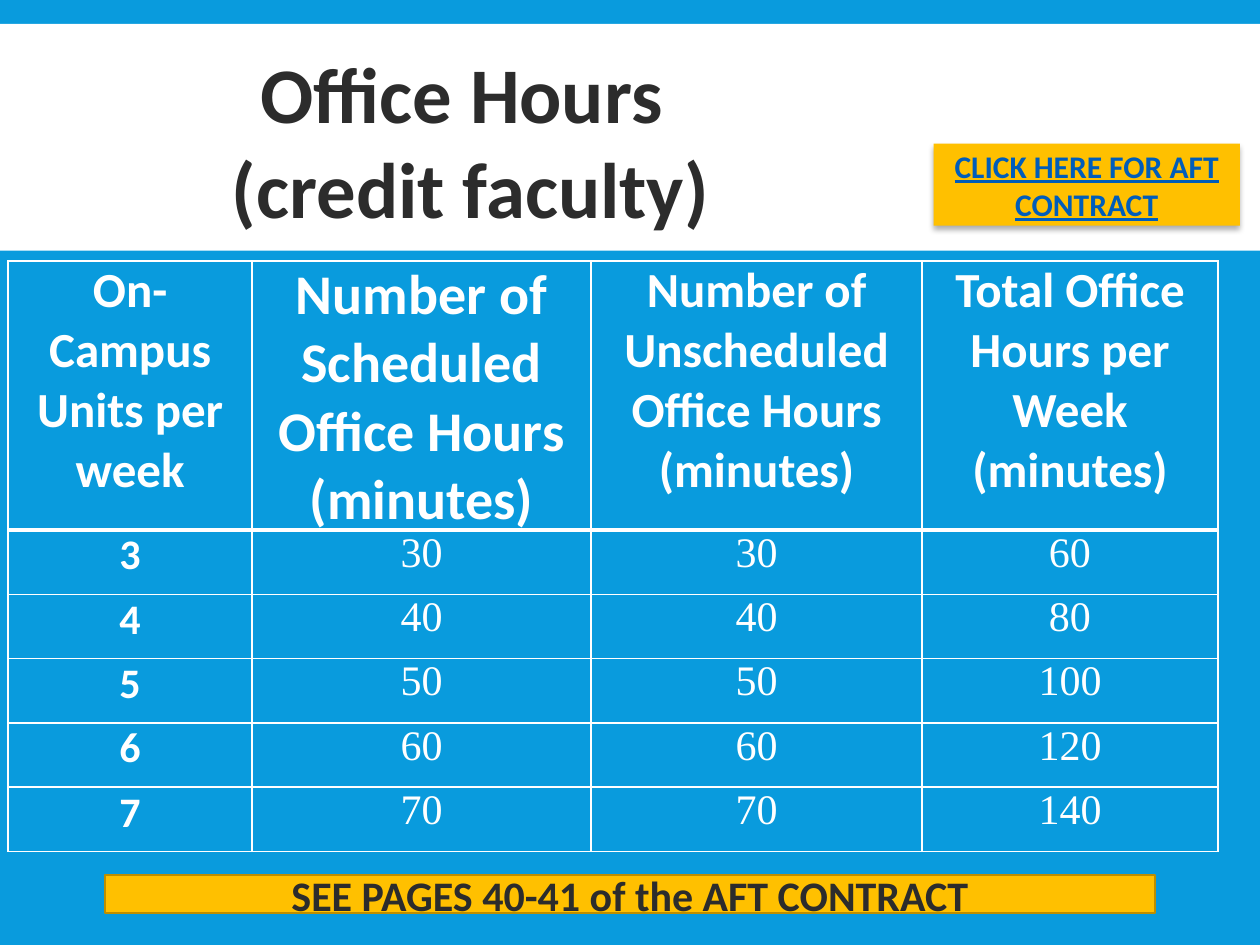
"""Build the office hours slide for credit faculty."""
import lxml.etree
import pptx
import pptx.dml.color
import pptx.enum.shapes
import pptx.enum.text
import pptx.oxml
import pptx.oxml.ns
import pptx.util

Pt = pptx.util.Pt
RGBColor = pptx.dml.color.RGBColor
BLUE = RGBColor(0x09, 0x9B, 0xDD)
WHITE = RGBColor(0xFF, 0xFF, 0xFF)
GOLD = RGBColor(0xFF, 0xC0, 0x00)
DARK_GOLD = RGBColor(0xBD, 0x8E, 0x00)
CHARCOAL = RGBColor(0x2C, 0x2C, 0x2C)
LINK_BLUE = RGBColor(0x00, 0x5D, 0xBA)
DRAWING = pptx.oxml.ns.nsdecls("a")


def write_text(frame, text, size, color, bold=True, font_name="Calibri"):
    frame.word_wrap = True
    paragraph = frame.paragraphs[0]
    paragraph.text = text
    paragraph.alignment = pptx.enum.text.PP_ALIGN.CENTER
    paragraph.font.name = font_name
    paragraph.font.size = Pt(size)
    paragraph.font.bold = bold
    paragraph.font.color.rgb = color
    return paragraph


def add_box(left, top, width, height, color):
    shape = slide.shapes.add_shape(
        pptx.enum.shapes.MSO_SHAPE.RECTANGLE, Pt(left), Pt(top), Pt(width), Pt(height))
    shape.shadow.inherit = False
    shape.fill.solid()
    shape.fill.fore_color.rgb = color
    shape.line.fill.background()
    shape.text_frame.vertical_anchor = pptx.enum.text.MSO_ANCHOR.MIDDLE
    return shape


presentation = pptx.Presentation()
presentation.slide_width = Pt(720)
presentation.slide_height = Pt(540)
slide = presentation.slides.add_slide(presentation.slide_layouts[6])
slide.background.fill.solid()
slide.background.fill.fore_color.rgb = BLUE

add_box(0, 13.7, 720, 129.6, WHITE)

title = slide.shapes.add_textbox(Pt(15.8), Pt(20.9), Pt(506.2), Pt(117.4))
title.text_frame.vertical_anchor = pptx.enum.text.MSO_ANCHOR.MIDDLE
write_text(title.text_frame, "Office Hours \v(credit faculty)", 45, CHARCOAL)

contract_button = add_box(533.5, 82.1, 175, 46.8, GOLD)
button_label = write_text(
    contract_button.text_frame, "CLICK HERE FOR AFT CONTRACT", 18, LINK_BLUE)
button_label.font.underline = True
effects = contract_button._element.spPr.find(pptx.oxml.ns.qn("a:effectLst"))
effects.append(pptx.oxml.parse_xml(
    f'<a:outerShdw {DRAWING} blurRad="{Pt(3.5)}" dist="{Pt(2.2)}" dir="5400000" '
    'algn="t" rotWithShape="0"><a:srgbClr val="000000"><a:alpha val="32000"/>'
    '</a:srgbClr></a:outerShdw>'))

headers = [
    "On-Campus Units per week",
    "Number of Scheduled Office Hours (minutes)",
    "Number of Unscheduled Office Hours (minutes)",
    "Total Office Hours per Week (minutes)",
]
header_sizes = [28, 32, 28, 28]
column_widths = [139.5, 193.7, 189.1, 169.1]
row_heights = [147] + [36.75] * 5
rows = [headers] + [
    [str(value) for value in (units, units * 10, units * 10, units * 20)]
    for units in range(3, 8)]

table = slide.shapes.add_table(
    len(rows), len(headers), Pt(4.6), Pt(149.2),
    Pt(sum(column_widths)), Pt(sum(row_heights))).table
table.horz_banding = False
for column, width in zip(table.columns, column_widths):
    column.width = Pt(width)
for row, height in zip(table.rows, row_heights):
    row.height = Pt(height)

for row_index, values in enumerate(rows):
    for column_index, value in enumerate(values):
        cell = table.cell(row_index, column_index)
        cell.margin_left = cell.margin_right = Pt(5)
        cell.margin_top = cell.margin_bottom = Pt(0)
        cell.fill.solid()
        cell.fill.fore_color.rgb = BLUE
        size = header_sizes[column_index] if row_index == 0 else 24
        bold = row_index == 0 or column_index == 0
        font_name = "Calibri" if bold else "Times New Roman"
        write_text(cell.text_frame, value, size, WHITE, bold, font_name)
        border_widths = {
            "lnL": 1, "lnR": 1,
            "lnT": 3 if row_index == 1 else 1,
            "lnB": 3 if row_index == 0 else 1,
        }
        properties = cell._tc.get_or_add_tcPr()
        for position, (side, width) in enumerate(border_widths.items()):
            properties.insert(position, pptx.oxml.parse_xml(
                f'<a:{side} {DRAWING} w="{Pt(width)}"><a:solidFill>'
                f'<a:srgbClr val="{WHITE}"/></a:solidFill></a:{side}>'))

page_note = add_box(60, 500.2, 600, 21.6, GOLD)
page_note.line.color.rgb = DARK_GOLD
page_note.line.width = Pt(1)
write_text(page_note.text_frame, "SEE PAGES 40-41 of the AFT CONTRACT", 24, CHARCOAL)

presentation.save("out.pptx")
